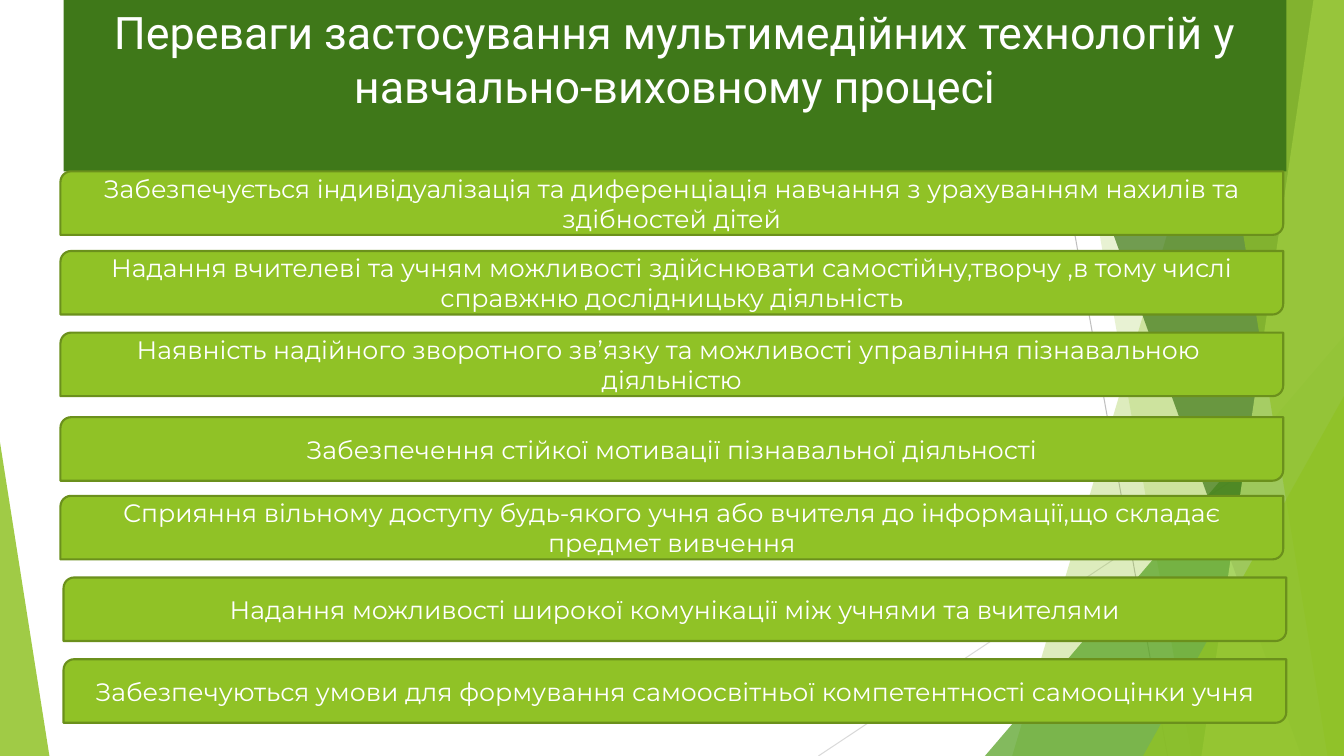
"""Build a slide on the advantages of multimedia technologies in education."""
from dataclasses import dataclass

from lxml.etree import SubElement
from pptx import Presentation
from pptx.dml.color import RGBColor
from pptx.enum.shapes import MSO_CONNECTOR, MSO_SHAPE
from pptx.enum.text import MSO_ANCHOR, PP_ALIGN
from pptx.oxml.ns import qn
from pptx.shapes.autoshape import Shape
from pptx.shapes.shapetree import SlideShapes
from pptx.util import Pt

WHITE = RGBColor(0xFF, 0xFF, 0xFF)
LIME = RGBColor(0x90, 0xC2, 0x26)
PALE_LIME = RGBColor(0xC0, 0xE4, 0x74)
OLIVE = RGBColor(0x6B, 0x90, 0x1C)
GREEN = RGBColor(0x54, 0xA0, 0x21)
DARK_GREEN = RGBColor(0x3F, 0x78, 0x19)
GREY = RGBColor(0xBF, 0xBF, 0xBF)
LIGHT_GREY = RGBColor(0xD9, 0xD9, 0xD9)

SLIDE_W, SLIDE_H = 960, 540
BAR_W, BAR_H = 873.4, 45.4
BODY_X, WIDE_X = 43.2, 45.4


@dataclass(frozen=True)
class Ray:
    x1: float
    y1: float
    x2: float
    y2: float
    color: RGBColor


@dataclass(frozen=True)
class Panel:
    top_x: float
    bottom_x: float
    color: RGBColor
    opacity: int


@dataclass(frozen=True)
class Wedge:
    left: float
    top: float
    width: float
    apex: float
    color: RGBColor
    opacity: int


@dataclass(frozen=True)
class Benefit:
    left: float
    top: float
    text: str


RAYS = [
    Ray(738, 0, 834, SLIDE_H, GREY),
    Ray(SLIDE_W, 290, 584.6, SLIDE_H, LIGHT_GREY),
]

FACETS: list[Panel | Wedge] = [
    Panel(883.4, 723, LIME, 30),
    Panel(756, 851, LIME, 20),
    Wedge(703.5, 240, 256.5, 1, GREEN, 72),
    Panel(735, 929.5, DARK_GREEN, 70),
    Panel(938.2, 858.2, PALE_LIME, 70),
    Panel(861, 948.2, LIME, 65),
    Wedge(816.5, 283, 143.5, 1, LIME, 80),
    Wedge(0, 316, 35.3, 0, LIME, 85),
]

TITLE = "Переваги застосування мультимедійних технологій у навчально-виховному процесі"

BENEFITS = [
    Benefit(BODY_X, 122.4, "Забезпечується індивідуалізація та диференціація навчання "
            "з урахуванням нахилів та здібностей дітей"),
    Benefit(BODY_X, 179.3, "Надання вчителеві та учням можливості здійснювати "
            "самостійну,творчу ,в тому числі справжню дослідницьку діяльність"),
    Benefit(BODY_X, 237.6, "Наявність надійного зворотного зв’язку та можливості "
            "управління пізнавальною \nдіяльністю"),
    Benefit(BODY_X, 298, "Забезпечення стійкої мотивації пізнавальної діяльності"),
    Benefit(BODY_X, 354.2, "Сприяння вільному доступу будь-якого учня або вчителя "
            "до інформації,що складає предмет вивчення"),
    Benefit(WIDE_X, 412.5, "Надання можливості широкої комунікації між учнями та вчителями"),
    Benefit(WIDE_X, 470.9, "Забезпечуються умови для формування самоосвітньої "
            "компетентності самооцінки учня"),
]


def paint(sp: Shape, color: RGBColor, opacity: int = 100) -> None:
    sp.shadow.inherit = False
    sp.fill.solid()
    sp.fill.fore_color.rgb = color
    sp.line.fill.background()
    if opacity < 100:
        clr = sp.fill._xPr.find(qn("a:solidFill"))[0]
        SubElement(clr, qn("a:alpha")).set("val", str(opacity * 1000))


def draw_ray(shapes: SlideShapes, ray: Ray) -> None:
    cn = shapes.add_connector(MSO_CONNECTOR.STRAIGHT,
                              Pt(ray.x1), Pt(ray.y1), Pt(ray.x2), Pt(ray.y2))
    cn.line.color.rgb = ray.color
    cn.line.width = Pt(0.75)
    SubElement(cn._element.spPr, qn("a:effectLst"))


def draw_facet(shapes: SlideShapes, facet: Panel | Wedge) -> None:
    if isinstance(facet, Panel):
        fb = shapes.build_freeform(Pt(facet.top_x), 0)
        fb.add_line_segments([
            (Pt(SLIDE_W), 0),
            (Pt(SLIDE_W), Pt(SLIDE_H)),
            (Pt(facet.bottom_x), Pt(SLIDE_H)),
        ], close=True)
        sp = fb.convert_to_shape()
    else:
        sp = shapes.add_shape(MSO_SHAPE.ISOSCELES_TRIANGLE, Pt(facet.left), Pt(facet.top),
                              Pt(facet.width), Pt(SLIDE_H - facet.top))
        sp.adjustments[0] = facet.apex
    paint(sp, facet.color, facet.opacity)


def write(sp: Shape, text: str, font: str, size: float, anchor: MSO_ANCHOR) -> None:
    tf = sp.text_frame
    tf.word_wrap = True
    tf.vertical_anchor = anchor
    tf.text = text
    for p in tf.paragraphs:
        p.alignment = PP_ALIGN.CENTER
        for r in p.runs:
            r.font.name = font
            r.font.size = Pt(size)
            r.font.color.rgb = WHITE


def draw_title(shapes: SlideShapes) -> None:
    sp = shapes.add_shape(MSO_SHAPE.RECTANGLE, Pt(WIDE_X), 0, Pt(BAR_W), Pt(122.4))
    paint(sp, DARK_GREEN)
    write(sp, TITLE, "Roboto", 32, MSO_ANCHOR.TOP)


def draw_benefit(shapes: SlideShapes, benefit: Benefit) -> None:
    sp = shapes.add_shape(MSO_SHAPE.ROUND_2_DIAG_RECTANGLE, Pt(benefit.left),
                          Pt(benefit.top), Pt(BAR_W), Pt(BAR_H))
    paint(sp, LIME)
    sp.line.color.rgb = OLIVE
    sp.line.width = Pt(1.5)
    write(sp, benefit.text, "Montserrat", 18, MSO_ANCHOR.MIDDLE)


def main() -> None:
    prs = Presentation()
    prs.slide_width, prs.slide_height = Pt(SLIDE_W), Pt(SLIDE_H)
    s = prs.slides.add_slide(prs.slide_layouts[6])
    for ray in RAYS:
        draw_ray(s.shapes, ray)
    for facet in FACETS:
        draw_facet(s.shapes, facet)
    draw_title(s.shapes)
    for benefit in BENEFITS:
        draw_benefit(s.shapes, benefit)
    prs.save("out.pptx")


if __name__ == "__main__":
    main()
